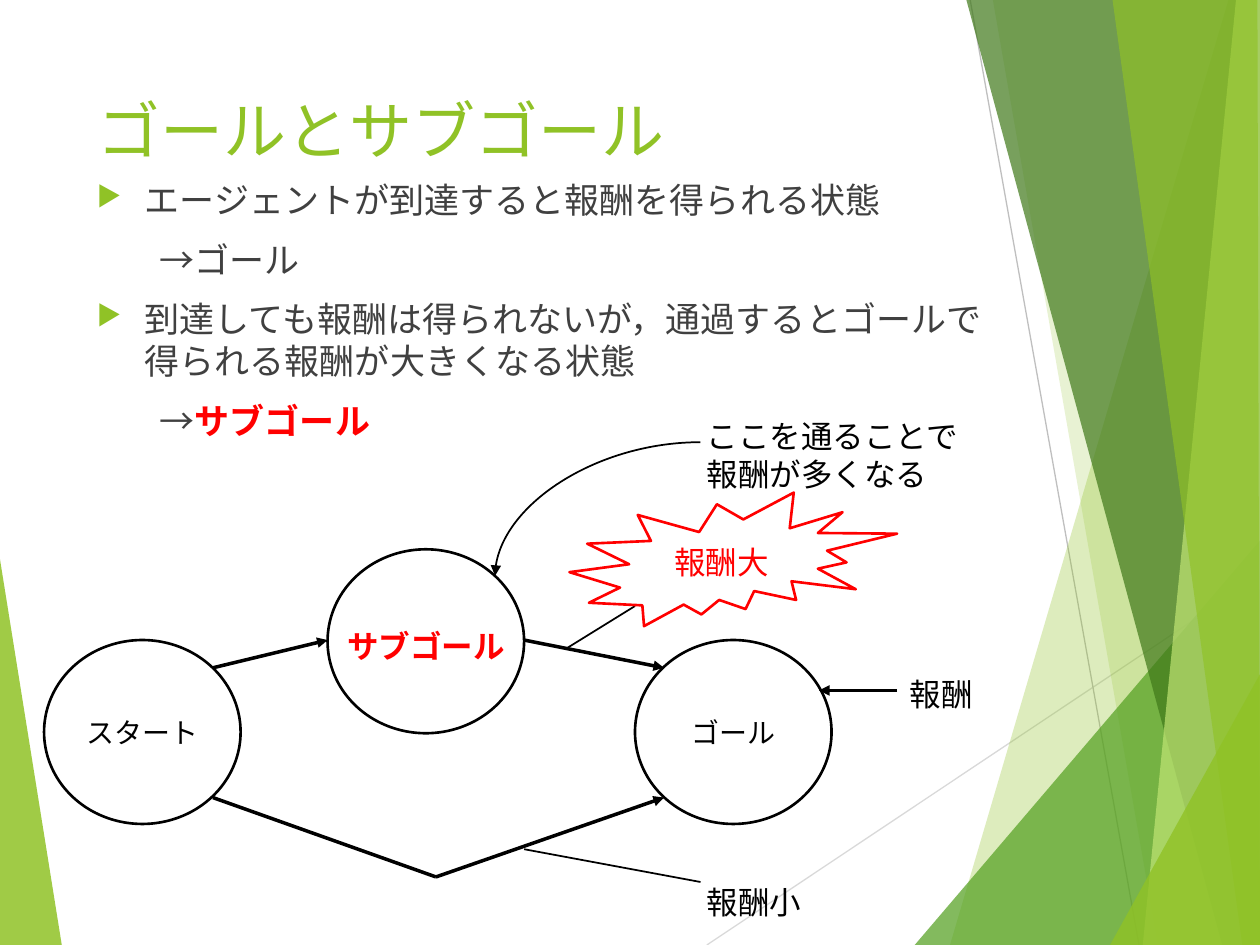
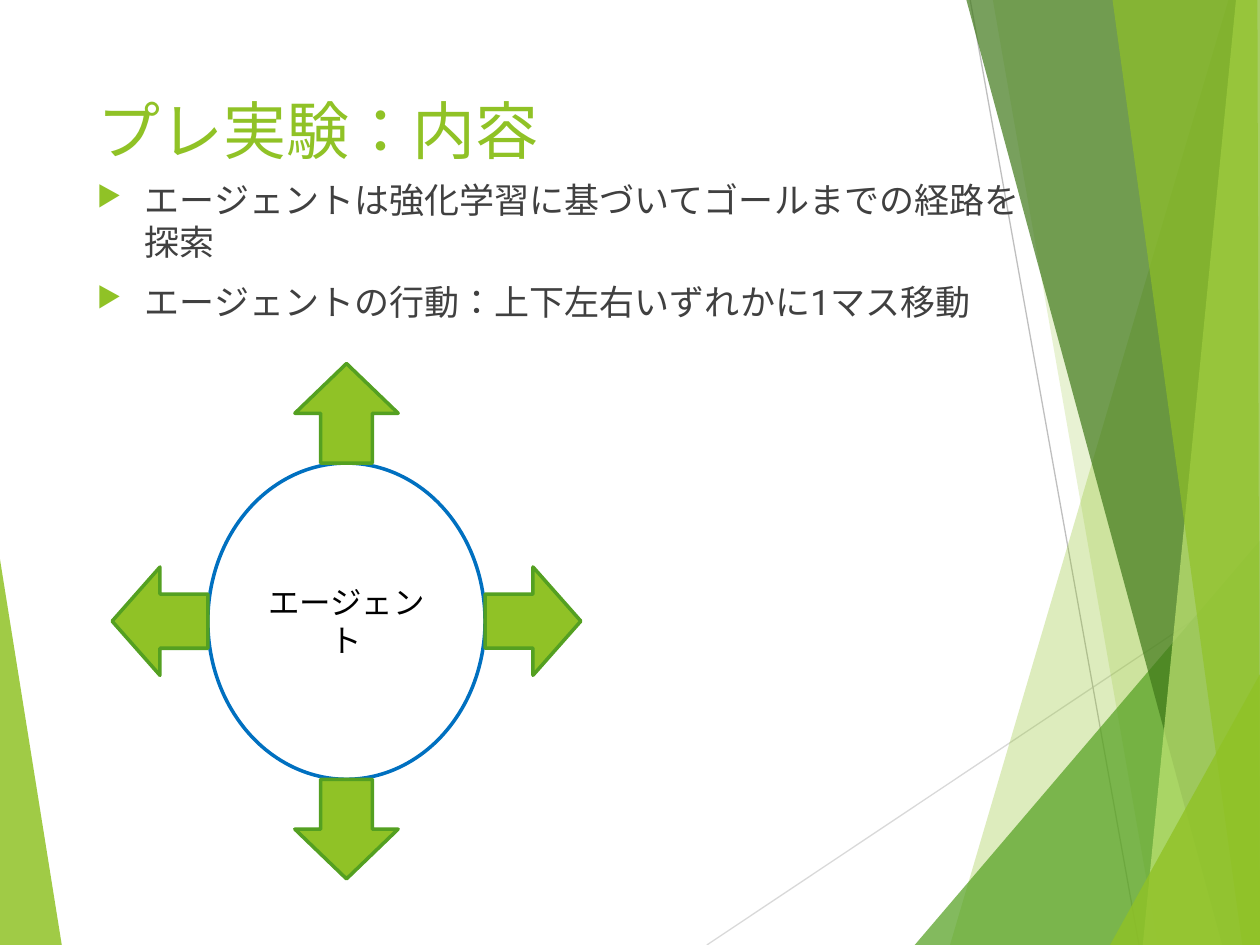
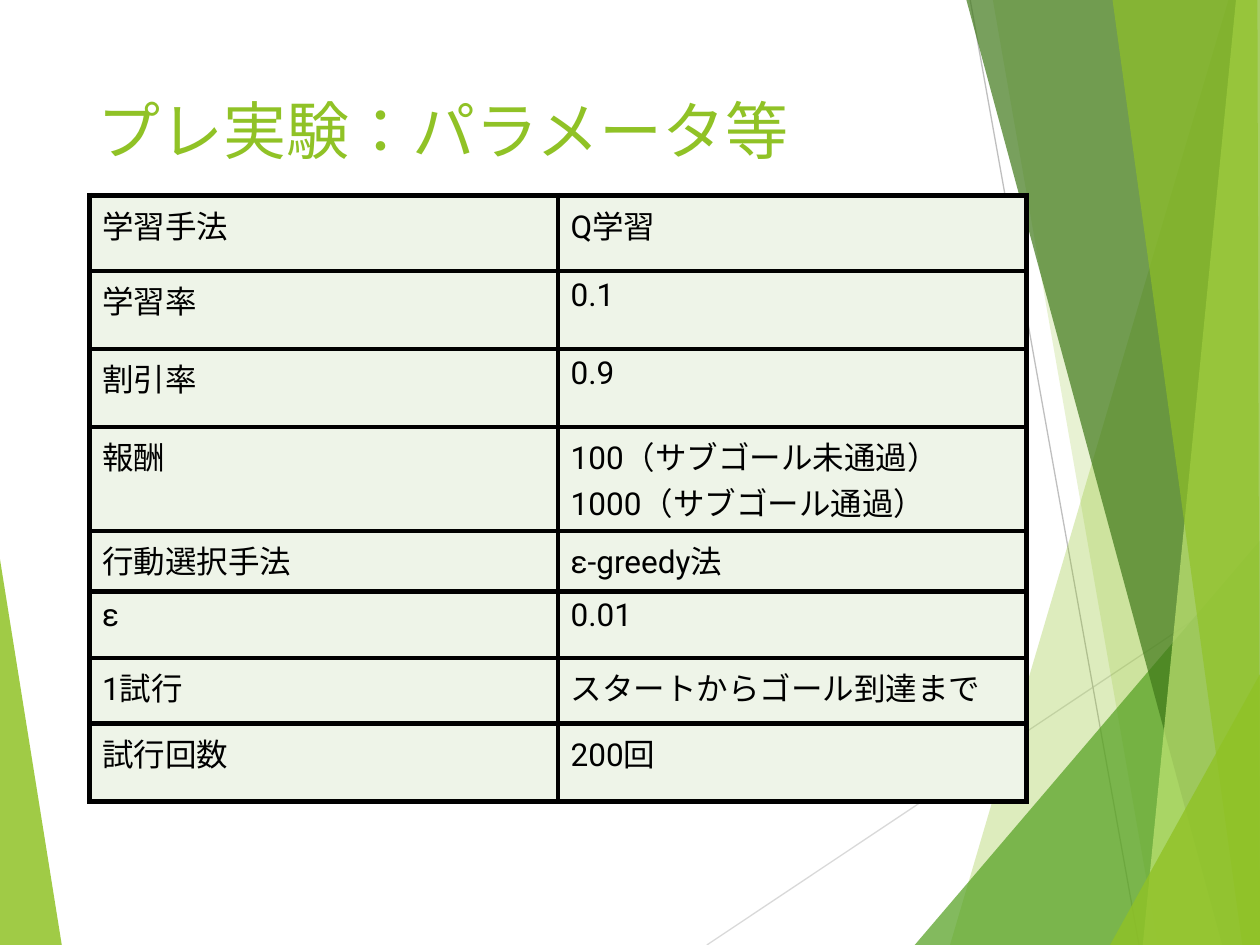
"""Build three slides on sub-goals in reinforcement learning."""
from dataclasses import dataclass

from lxml.etree import SubElement
from pptx import Presentation
from pptx.dml.color import RGBColor
from pptx.enum.lang import MSO_LANGUAGE_ID
from pptx.enum.shapes import MSO_CONNECTOR, MSO_SHAPE
from pptx.enum.text import MSO_ANCHOR, PP_ALIGN
from pptx.oxml.ns import qn
from pptx.util import Inches, Pt

STRAIGHT, CURVE = MSO_CONNECTOR.STRAIGHT, MSO_CONNECTOR.CURVE
ELLIPSE, UP_ARROW = MSO_SHAPE.OVAL, MSO_SHAPE.UP_ARROW
BURST = MSO_SHAPE.EXPLOSION2
LEFT, CENTER = PP_ALIGN.LEFT, PP_ALIGN.CENTER
TOP, MIDDLE = MSO_ANCHOR.TOP, MSO_ANCHOR.MIDDLE
JAPANESE = MSO_LANGUAGE_ID.JAPANESE
TITLE_ONLY = 5


@dataclass(frozen=True)
class Theme:
    """Colours, font and type sizes of the deck."""
    font: str = "Roboto"
    green: str = "90C226"
    deep_green: str = "54A021"
    forest: str = "3F7819"
    lime: str = "C0E474"
    cell: str = "EEF4E8"
    body: str = "404040"
    black: str = "000000"
    red: str = "FF0000"
    blue: str = "0070C0"
    light_rule: str = "D9D9D9"
    rule: str = "BFBFBF"
    title_size: int = 36
    body_size: int = 20
    label_size: int = 18
    node_size: int = 16


THEME = Theme()

BACKDROP_RULES = [
    ((5.61, 7.5), (10, 4.57), THEME.light_rule),
    ((7.7, 0), (9.04, 7.5), THEME.rule),
]
BACKDROP_BANDS = [
    ([(0, 4.44), (0.49, 7.5), (0, 7.5)], THEME.green, 85),
    ([(9.75, 0), (7.54, 7.5), (10, 7.5), (10, 0)], THEME.green, 30),
    ([(7.88, 0), (9.19, 7.5), (10, 7.5), (10, 0)], THEME.green, 20),
    ([(7.26, 7.5), (10, 4.29), (10, 7.5)], THEME.deep_green, 72),
    ([(7.67, 0), (9.7, 7.5), (10, 7.5), (10, 0)], THEME.forest, 70),
    ([(9.81, 0), (9.07, 7.5), (10, 7.5), (10, 0)], THEME.lime, 70),
    ([(8.83, 0), (9.86, 7.5), (10, 7.5), (9.98, 0)], THEME.green, 65),
    ([(8.81, 7.5), (10, 5.35), (10, 7.5)], THEME.green, 80),
]
PARAMETERS = [
    ("学習手法", ["Q学習"], 0.6),
    ("学習率", ["0.1"], 0.62),
    ("割引率", ["0.9"], 0.62),
    ("報酬", ["100（サブゴール未通過）", "1000（サブゴール通過）"], 0.68),
    ("行動選択手法", ["ε-greedy法"], 0.48),
    ("ε", ["0.01"], 0.53),
    ("1試行", ["スタートからゴール到達まで"], 0.52),
    ("試行回数", ["200回"], 0.62),
]


def rgb(colour):
    """Turn a hex string into a colour."""
    return RGBColor.from_string(colour)


def add_run(paragraph, text, size, colour, bold=False, east_asian=True):
    """Append one formatted run."""
    run = paragraph.add_run()
    run.text = text
    run.font.name = THEME.font
    run.font.size = Pt(size)
    run.font.bold = bold
    run.font.color.rgb = rgb(colour)
    run.font.language_id = JAPANESE
    if east_asian:
        SubElement(run._r.get_or_add_rPr(), qn("a:ea"), typeface=THEME.font)


def add_line(slide, start, end, colour=THEME.black, width=1.0, arrow=False,
             kind=STRAIGHT):
    """Draw a line between two points, with an optional arrowhead."""
    line = slide.shapes.add_connector(kind, *map(Inches, start + end))
    line.line.color.rgb = rgb(colour)
    line.line.width = Pt(width)
    properties = line.element.spPr
    if arrow:
        SubElement(properties.find(qn("a:ln")), qn("a:tailEnd"), type="triangle")
    SubElement(properties, qn("a:effectLst"))
    return line


def add_arc_arrow(slide, start, end):
    """Draw a quarter-turn curved arrow."""
    arc = add_line(slide, start, end, arrow=True, kind=CURVE)
    arc.element.spPr.find(qn("a:prstGeom")).set("prst", "curvedConnector2")


def add_band(slide, corners, colour, opacity):
    """Draw a translucent polygon."""
    points = [tuple(map(Inches, corner)) for corner in corners]
    builder = slide.shapes.build_freeform(*points[0])
    builder.add_line_segments(points[1:], close=True)
    band = builder.convert_to_shape()
    band.shadow.inherit = False
    band.fill.solid()
    band.fill.fore_color.rgb = rgb(colour)
    band.line.fill.background()
    tint = band.element.spPr.find(qn("a:solidFill")).find(qn("a:srgbClr"))
    SubElement(tint, qn("a:alpha"), val=str(opacity * 1000))


def add_backdrop(slide):
    """Draw the shared backdrop and hand it to the slide's layout."""
    tree = slide.shapes.element
    content = list(tree)
    add_band(slide, *BACKDROP_BANDS[0])
    for start, end, colour in BACKDROP_RULES:
        add_line(slide, start, end, colour, 0.75)
    for band in BACKDROP_BANDS[1:]:
        add_band(slide, *band)
    layout_tree = slide.slide_layout.shapes.element
    for part in list(tree)[len(content):]:
        layout_tree.append(part)


def add_titled_slide(deck, heading):
    """Add a title-only slide with its formatted title."""
    slide = deck.slides.add_slide(deck.slide_layouts[TITLE_ONLY])
    title = slide.shapes.title
    title.left, title.top = Inches(0.67), Inches(0.67)
    title.width, title.height = Inches(6.94), Inches(0.72)
    title.text_frame.vertical_anchor = MIDDLE
    paragraph = title.text_frame.paragraphs[0]
    paragraph.alignment = LEFT
    add_run(paragraph, heading, THEME.title_size, THEME.green)
    return slide


def add_text_frame(slide, left, top, width, height):
    """Add a wrapping text box and return its frame."""
    frame = slide.shapes.add_textbox(
        *map(Inches, (left, top, width, height))).text_frame
    frame.word_wrap = True
    frame.vertical_anchor = TOP
    return frame


def add_label(slide, text, box, colour=THEME.black, bold=False):
    """Add a one-run label."""
    frame = add_text_frame(slide, *box)
    add_run(frame.paragraphs[0], text, THEME.label_size, colour, bold)


def add_bullet(properties):
    """Give a paragraph the green triangle bullet."""
    properties.set("indent", str(-Inches(0.38)))
    bullet_colour = SubElement(properties, qn("a:buClr"))
    SubElement(bullet_colour, qn("a:srgbClr"), val=THEME.green)
    SubElement(properties, qn("a:buSzPct"), val="80000")
    SubElement(properties, qn("a:buChar"), char="▶")


def add_body(slide, points):
    """Write bulleted points and the conclusions drawn from them."""
    frame = add_text_frame(slide, 0.67, 1.37, 7.56, 5.22)
    for index, (lines, conclusion) in enumerate(points):
        point = frame.add_paragraph() if index else frame.paragraphs[0]
        point.space_before = Pt(10)
        properties = point._p.get_or_add_pPr()
        properties.set("marL", str(Inches(0.38)))
        add_bullet(properties)
        for number, line in enumerate(lines):
            if number:
                point.add_line_break()
            add_run(point, line, THEME.body_size, THEME.body)
        if conclusion:
            answer = frame.add_paragraph()
            answer.space_before = Pt(10)
            answer._p.get_or_add_pPr().set("marL", str(Inches(0.5)))
            for text, colour, bold in conclusion:
                add_run(answer, text, THEME.body_size, colour, bold)


def add_figure(slide, kind, box, outline, width=1.5, text="", size=THEME.node_size,
               colour=THEME.black, fill=None):
    """Add an outlined preset shape with optional centred text."""
    figure = slide.shapes.add_shape(kind, *map(Inches, box))
    figure.shadow.inherit = False
    if fill:
        figure.fill.solid()
        figure.fill.fore_color.rgb = rgb(fill)
    else:
        figure.fill.background()
    figure.line.color.rgb = rgb(outline)
    figure.line.width = Pt(width)
    if text:
        figure.text_frame.word_wrap = True
        figure.text_frame.vertical_anchor = MIDDLE
        paragraph = figure.text_frame.paragraphs[0]
        paragraph.alignment = CENTER
        add_run(paragraph, text, size, colour)
    return figure


def add_move_arrow(slide, centre, size, turn):
    """Add a block arrow centred on a point and turned clockwise."""
    (x, y), (width, height) = centre, size
    box = (x - width / 2, y - height / 2, width, height)
    arrow = add_figure(slide, UP_ARROW, box, THEME.deep_green, 2, fill=THEME.green)
    arrow.rotation = turn


def fill_cell(cell, lines):
    """Write a table cell, one paragraph a line."""
    cell.fill.solid()
    cell.fill.fore_color.rgb = rgb(THEME.cell)
    for index, line in enumerate(lines):
        frame = cell.text_frame
        paragraph = frame.add_paragraph() if index else frame.paragraphs[0]
        add_run(paragraph, line, THEME.label_size, THEME.black, east_asian=False)


def add_cell_borders(frame):
    """Put a thick black border on every cell edge."""
    for properties in list(frame.element.iter(qn("a:tcPr"))):
        for index, edge in enumerate(("a:lnL", "a:lnR", "a:lnT", "a:lnB")):
            border = SubElement(properties, qn(edge), w=str(Pt(3)))
            paint = SubElement(border, qn("a:solidFill"))
            SubElement(paint, qn("a:srgbClr"), val=THEME.black)
            properties.insert(index, border)


def add_parameter_table(slide, parameters):
    """Add the two-column table of experiment parameters."""
    total = sum(height for _, _, height in parameters)
    frame = slide.shapes.add_table(
        len(parameters), 2, *map(Inches, (0.71, 1.55, 7.44, total)))
    table = frame.table
    table.first_row = table.horz_banding = False
    for row, (name, values, height) in zip(table.rows, parameters):
        row.height = Inches(height)
        fill_cell(row.cells[0], [name])
        fill_cell(row.cells[1], values)
    add_cell_borders(frame)


def build_goal_slide(deck):
    """Explain goals and sub-goals with a route diagram."""
    slide = add_titled_slide(deck, "ゴールとサブゴール")
    add_backdrop(slide)
    add_body(slide, [
        (["エージェントが到達すると報酬を得られる状態"],
         [("→ゴール", THEME.body, False)]),
        (["到達しても報酬は得られないが，通過するとゴールで",
          "得られる報酬が大きくなる状態"],
         [("→", THEME.body, False), ("サブゴール", THEME.red, True)]),
    ])
    for left, top, name in ((2.6, 4.36, ""), (0.35, 5.08, "スタート"),
                            (5.04, 5.08, "ゴール")):
        add_figure(slide, ELLIPSE, (left, top, 1.56, 1.46), THEME.black, text=name)
    for start, end, arrow in (((1.69, 5.3), (2.6, 5.08), True),
                              ((4.16, 5.08), (5.27, 5.3), True),
                              ((1.69, 6.33), (3.46, 6.96), False),
                              ((3.46, 6.96), (5.27, 6.33), True),
                              ((7.12, 5.48), (6.5, 5.48), True)):
        add_line(slide, start, end, width=2, arrow=arrow)
    add_line(slide, (4.16, 6.74), (5.56, 7))
    add_line(slide, (4.49, 5.15), (5.04, 4.81))
    add_figure(slide, BURST, (4.52, 3.91, 2.6, 1.06), THEME.red, text="報酬大",
               size=THEME.label_size, colour=THEME.red)
    add_arc_arrow(slide, (5.56, 3.51), (3.93, 4.57))
    add_label(slide, "報酬小", (5.51, 6.96, 1.09, 0.4))
    add_label(slide, "ここを通ることで報酬が多くなる", (5.51, 3.26, 2.36, 0.71))
    add_label(slide, "サブゴール", (2.66, 4.93, 1.67, 0.41), THEME.red, True)
    add_label(slide, "報酬", (7.12, 5.31, 0.95, 0.4))


def build_experiment_slide(deck):
    """Show the agent and its four moves."""
    slide = add_titled_slide(deck, "プレ実験：内容")
    add_body(slide, [
        (["エージェントは強化学習に基づいてゴールまでの経路を探索"], None),
        (["エージェントの行動：上下左右いずれかに1マス移動"], None),
    ])
    x, y = 2.75, 4.93
    width, height = 2.2, 2.51
    add_figure(slide, ELLIPSE, (x - width / 2, y - height / 2, width, height),
               THEME.blue, 2, "エージェント", THEME.label_size)
    for turn, side in ((0, -1), (180, 1)):
        add_move_arrow(slide, (x, y + side * 1.65), (0.82, 0.79), turn)
    for turn, side in ((270, -1), (90, 1)):
        add_move_arrow(slide, (x + side * 1.48, y), (0.86, 0.76), turn)


def build_parameter_slide(deck):
    """List the experiment parameters."""
    slide = add_titled_slide(deck, "プレ実験：パラメータ等")
    add_parameter_table(slide, PARAMETERS)


def main():
    """Build and save the deck."""
    deck = Presentation()
    deck.slide_width, deck.slide_height = Inches(10), Inches(7.5)
    build_goal_slide(deck)
    build_experiment_slide(deck)
    build_parameter_slide(deck)
    deck.save("out.pptx")


if __name__ == "__main__":
    main()
